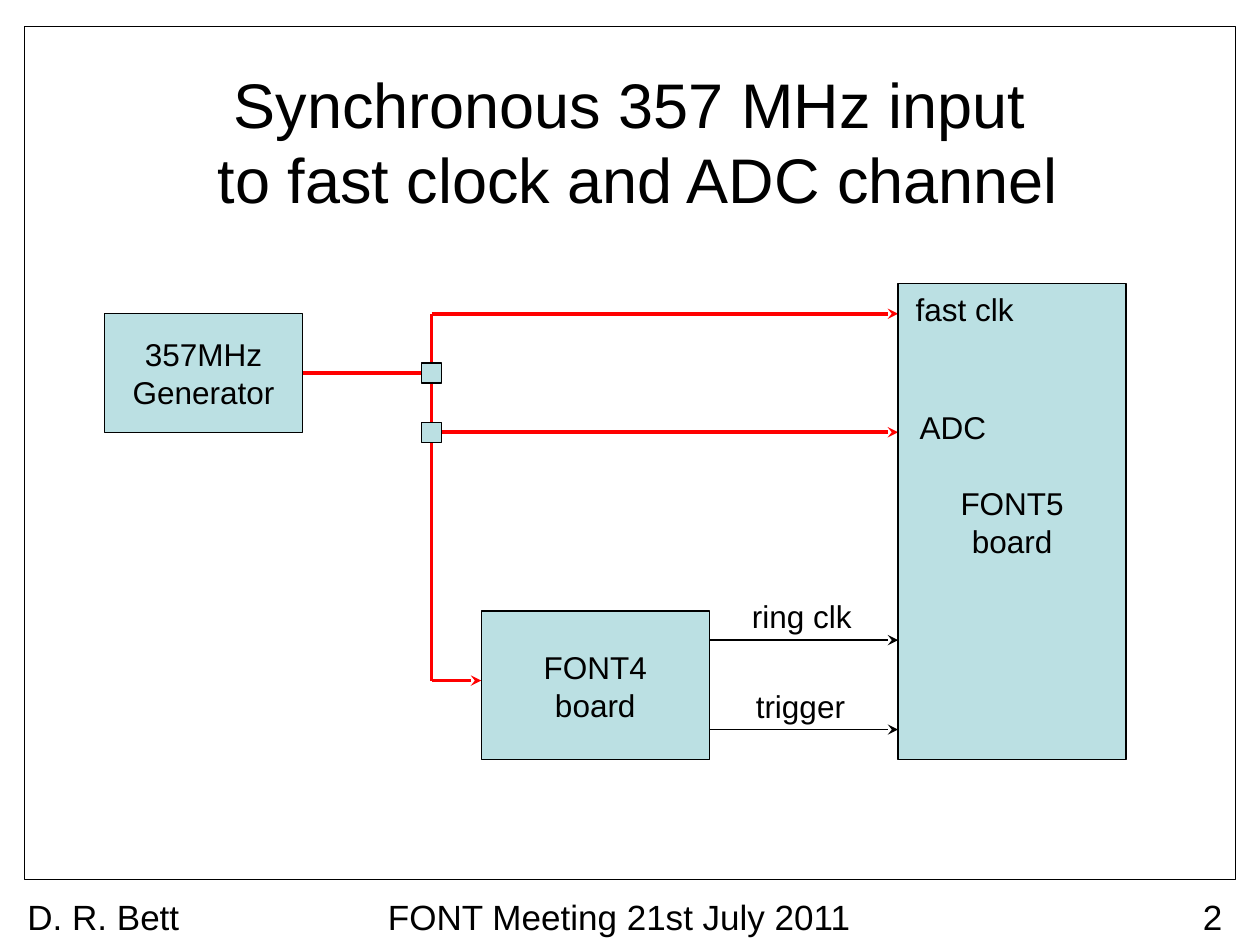
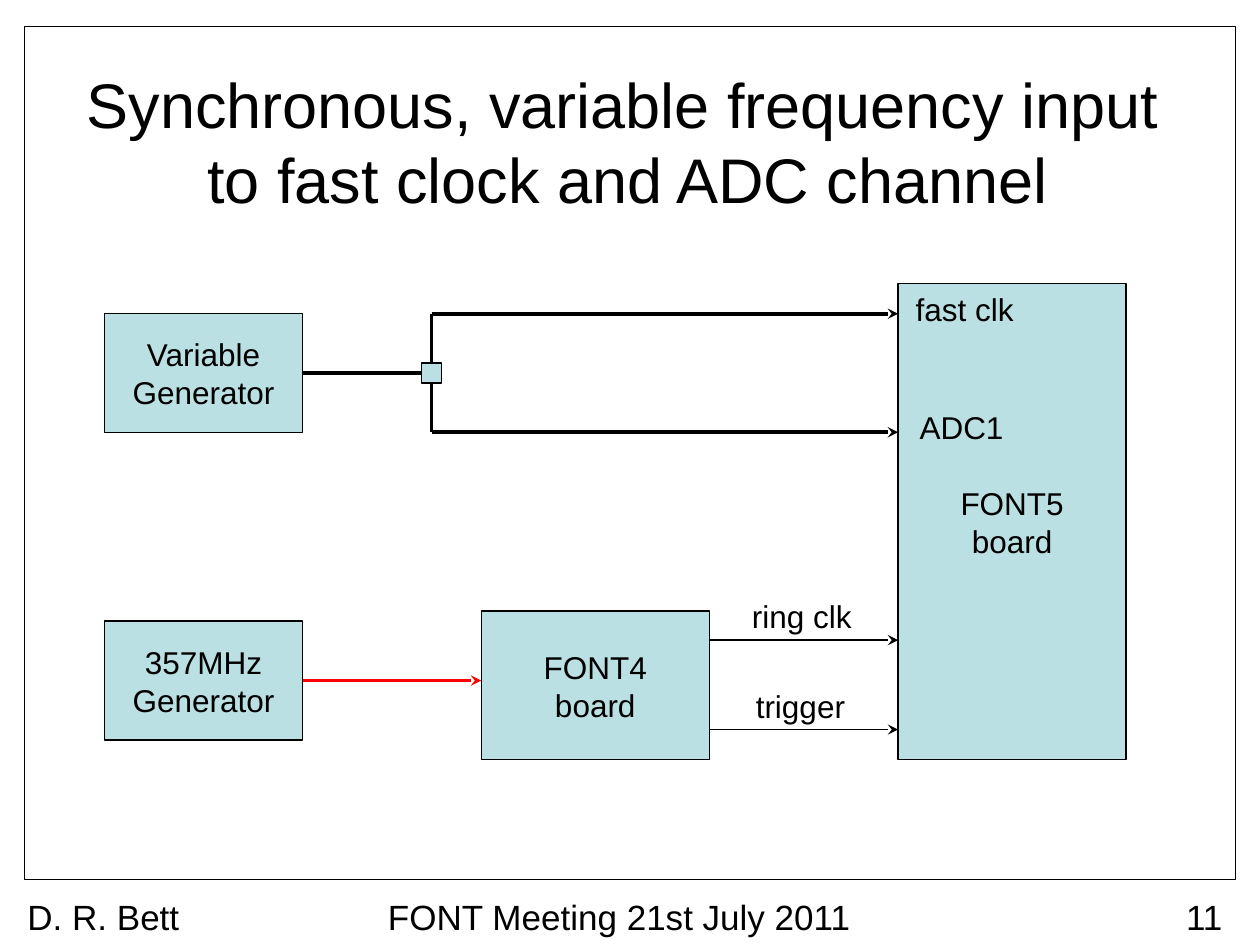
from dataclasses import dataclass

from lxml import etree
from pptx import Presentation
from pptx.dml.color import RGBColor
from pptx.enum.shapes import MSO_CONNECTOR, MSO_SHAPE
from pptx.enum.text import MSO_ANCHOR, MSO_AUTO_SIZE, PP_ALIGN
from pptx.oxml.ns import qn
from pptx.util import Pt

RECT = MSO_SHAPE.RECTANGLE
STRAIGHT = MSO_CONNECTOR.STRAIGHT
MIDDLE = MSO_ANCHOR.MIDDLE
GROW = MSO_AUTO_SIZE.SHAPE_TO_FIT_TEXT
LEFT, CENTER, RIGHT = PP_ALIGN.LEFT, PP_ALIGN.CENTER, PP_ALIGN.RIGHT


@dataclass(frozen=True)
class Theme:
    font: str = "Arial"
    ink: RGBColor = RGBColor(0, 0, 0)
    signal: RGBColor = RGBColor(255, 0, 0)
    block: RGBColor = RGBColor(0xBB, 0xE0, 0xE3)
    title: int = 36
    footer: int = 20
    label: int = 18
    thin: float = 0.75
    thick: float = 2


T = Theme()

GEN_X, GEN_W, GEN_H = 59.8, 113, 68
GEN_RIGHT = GEN_X + GEN_W
JUNCTION_X, JUNCTION_SIZE = 246.6, 11.5
CLK_Y, ADC_Y = 179.3, 247
GEN_Y = (CLK_Y + ADC_Y) / 2
FONT4_X, FONT4_Y, FONT4_H = 275, 349.2, 85
FONT5_X, FONT5_Y, FONT5_H = 513.2, 162, 272.2
BOARD_W = 130.3
FONT4_IN_Y, RING_Y, TRIGGER_Y = 388.9, 365.8, 416.9


def write(tf, text, size, aligns):
    tf.text = text
    for p, align in zip(tf.paragraphs, aligns):
        p.alignment = align
        for r in p.runs:
            r.font.name = T.font
            r.font.size = Pt(size)
            r.font.color.rgb = T.ink


def add_text(s, text, x, y, w, h, size, aligns, wrap=True):
    tf = s.shapes.add_textbox(Pt(x), Pt(y), Pt(w), Pt(h)).text_frame
    tf.word_wrap = wrap
    if not wrap:
        tf.auto_size = GROW
    write(tf, text, size, aligns)


def add_label(s, text, x, y, w):
    add_text(s, text, x, y, w, 28.8, T.label, [LEFT], wrap=False)


def add_box(s, x, y, w, h, text="", fill=T.block):
    sp = s.shapes.add_shape(RECT, Pt(x), Pt(y), Pt(w), Pt(h))
    sp.shadow.inherit = False
    if fill is None:
        sp.fill.background()
    else:
        sp.fill.solid()
        sp.fill.fore_color.rgb = fill
    sp.line.color.rgb = T.ink
    sp.line.width = Pt(T.thin)
    if text:
        tf = sp.text_frame
        tf.word_wrap = False
        tf.vertical_anchor = MIDDLE
        write(tf, text, T.label, [CENTER, CENTER])


def add_wire(s, x1, y1, x2, y2, color=T.ink, width=T.thick, arrow=False):
    c = s.shapes.add_connector(STRAIGHT, Pt(x1), Pt(y1), Pt(x2), Pt(y2))
    c.line.color.rgb = color
    c.line.width = Pt(width)
    if arrow:
        ln = c.line._get_or_add_ln()
        etree.SubElement(ln, qn("a:tailEnd"), type="stealth")
    etree.SubElement(c._element.spPr, qn("a:effectLst"))


def add_generator(s, text, mid_y):
    add_box(s, GEN_X, mid_y - GEN_H / 2, GEN_W, GEN_H, text)


def add_junction(s, y):
    half = JUNCTION_SIZE / 2
    add_box(s, JUNCTION_X - half, y - half, JUNCTION_SIZE, JUNCTION_SIZE)


def add_slide(prs, number):
    s = prs.slides.add_slide(prs.slide_layouts[6])
    add_box(s, 14.2, 15, 692, 487.5, fill=None)
    for text, x, w, align in (
        ("D. R. Bett", 8.6, 102.2, LEFT),
        ("FONT Meeting 21st July 2011", 110.2, 487.4, CENTER),
        (number, 666, 39.6, RIGHT),
    ):
        add_text(s, text, x, 508.3, w, 23, T.footer, [align])
    return s


def add_title(s, text, x, w, aligns):
    add_text(s, text, x, 33.8, w, 94.3, T.title, aligns)


def add_splitter(s, color, bottom):
    add_wire(s, GEN_RIGHT, GEN_Y, JUNCTION_X, GEN_Y, color)
    add_wire(s, JUNCTION_X, CLK_Y, JUNCTION_X, bottom, color)
    for y in (CLK_Y, ADC_Y):
        add_wire(s, JUNCTION_X, y, FONT5_X, y, color, arrow=True)
    add_junction(s, GEN_Y)


def add_boards(s, adc):
    add_box(s, FONT4_X, FONT4_Y, BOARD_W, FONT4_H, "FONT4\nboard")
    add_box(s, FONT5_X, FONT5_Y, BOARD_W, FONT5_H, "FONT5\nboard")
    add_label(s, "fast clk", 516.2, CLK_Y - 17.3, 70.6)
    add_label(s, adc, 518.4, ADC_Y - 17.3, 62.6 if adc[-1].isdigit() else 52.6)
    for text, x, y, w in (
        ("ring clk", 422.6, RING_Y, 71.3),
        ("trigger", 424.8, TRIGGER_Y, 65.5),
    ):
        add_label(s, text, x, y - 28.1, w)
        add_wire(s, FONT4_X + BOARD_W, y, FONT5_X, y, width=T.thin, arrow=True)


def fixed_frequency_slide(prs):
    s = add_slide(prs, "2")
    add_splitter(s, T.signal, FONT4_IN_Y)
    add_wire(s, JUNCTION_X, FONT4_IN_Y, FONT4_X, FONT4_IN_Y, T.signal, arrow=True)
    add_junction(s, ADC_Y)
    add_generator(s, "357MHz\nGenerator", GEN_Y)
    add_boards(s, "ADC")
    add_title(s, "Synchronous 357 MHz input\n to fast clock and ADC channel",
              105.1, 509, [CENTER, CENTER])


def variable_frequency_slide(prs):
    s = add_slide(prs, "11")
    add_splitter(s, T.ink, ADC_Y)
    add_wire(s, GEN_RIGHT, FONT4_IN_Y, FONT4_X, FONT4_IN_Y, T.signal, arrow=True)
    add_generator(s, "Variable\nGenerator", GEN_Y)
    add_generator(s, "357MHz\nGenerator", FONT4_IN_Y)
    add_boards(s, "ADC1")
    add_title(s, "Synchronous, variable frequency input\nto fast clock and ADC channel",
              42.5, 632.2, [LEFT, CENTER])


def main():
    prs = Presentation()
    prs.slide_width, prs.slide_height = Pt(720), Pt(540)
    fixed_frequency_slide(prs)
    variable_frequency_slide(prs)
    prs.save("out.pptx")


if __name__ == "__main__":
    main()
